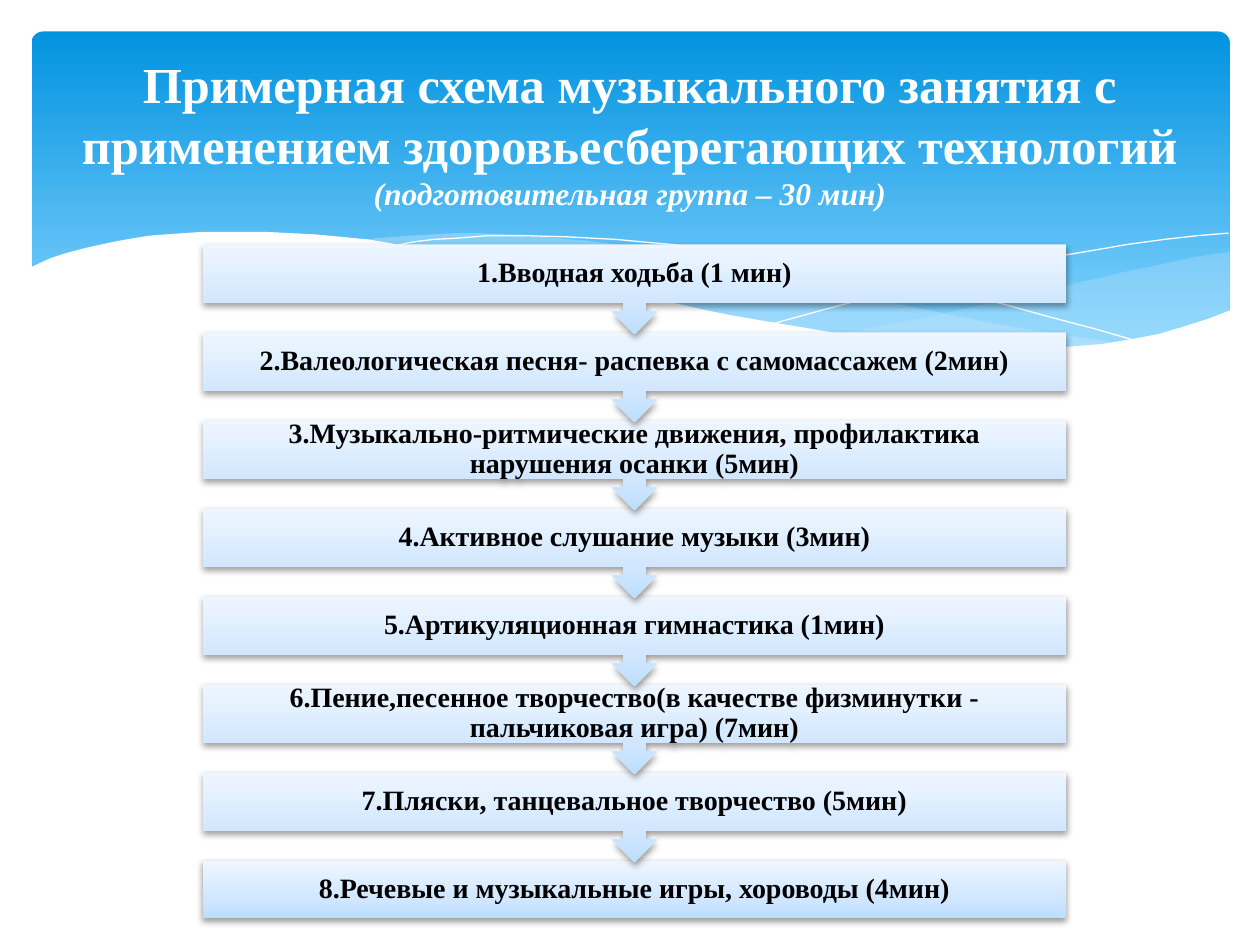
from pptx import Presentation
from pptx.dml.color import RGBColor
from pptx.enum.shapes import MSO_SHAPE as Preset
from pptx.enum.text import MSO_ANCHOR as Anchor, PP_ALIGN as Align
from pptx.oxml import parse_xml
from pptx.oxml.ns import nsdecls, qn
from pptx.util import Inches, Pt

WHITE = RGBColor(0xFF, 0xFF, 0xFF)
BLACK = RGBColor(0x00, 0x00, 0x00)
SKY_TOP = RGBColor(0x02, 0x93, 0xE0)
SKY_BOTTOM = RGBColor(0x83, 0xD3, 0xFE)
WAVE = RGBColor(0xC6, 0xE7, 0xFC)
BOX_DARK = RGBColor(0xBD, 0xDE, 0xFF)
BOX_MIDDLE = RGBColor(0xD1, 0xE7, 0xFF)
BOX_LIGHT = RGBColor(0xEE, 0xF6, 0xFF)
FONT = "Times New Roman"

# Wave outlines in hundredths of an inch
RIGHT_WAVE = [
    (975, 200), (962, 202), (948, 204), (935, 207), (921, 210), (906, 213), (891, 216),
    (876, 220), (861, 223), (832, 230), (805, 237), (779, 242), (753, 248), (729, 253),
    (706, 257), (683, 262), (661, 265), (691, 269), (719, 272), (745, 275), (769, 277),
    (803, 278), (835, 277), (863, 275), (889, 272), (913, 267), (935, 262), (949, 257),
    (963, 252), (976, 247), (976, 200)]
MIDDLE_WAVE = [
    (893, 273), (866, 269), (837, 265), (807, 260), (775, 254), (741, 247), (706, 240),
    (668, 231), (629, 222), (598, 214), (569, 208), (541, 203), (514, 198), (489, 194),
    (465, 191), (442, 189), (420, 187), (399, 186), (380, 185), (361, 185), (344, 186),
    (328, 187), (313, 188), (299, 189), (286, 191), (323, 196), (362, 203), (404, 211),
    (449, 222), (491, 232), (530, 240), (566, 248), (601, 255), (634, 261), (665, 266),
    (695, 270), (722, 274), (748, 276), (773, 277), (796, 278), (828, 278), (857, 277),
    (876, 275)]
LEFT_LINE = [
    (309, 195), (318, 194), (328, 192), (344, 190), (363, 189), (387, 187), (416, 187),
    (450, 188), (469, 189), (489, 190), (510, 192), (533, 194), (556, 197), (582, 200),
    (608, 204), (636, 208), (665, 213), (695, 219), (727, 226), (760, 233), (795, 241),
    (831, 251), (869, 261), (907, 272)]
RIGHT_LINE = [
    (613, 257), (624, 254), (653, 246), (672, 241), (695, 235), (720, 229), (748, 223),
    (776, 216), (806, 210), (836, 204), (866, 199), (895, 194), (924, 190), (951, 187),
    (975, 185)]
WHITE_HILL = [
    (977, 246), (959, 253), (940, 259), (920, 265), (899, 269), (875, 273), (850, 275),
    (823, 277), (809, 277), (778, 276), (744, 274), (708, 270), (668, 265), (626, 258),
    (579, 250), (555, 245), (529, 239), (503, 233), (475, 227), (447, 220), (418, 213),
    (391, 207), (365, 202), (340, 197), (316, 194), (292, 190), (271, 188), (250, 186),
    (230, 185), (211, 184), (177, 184), (161, 184), (146, 185), (132, 186), (119, 187),
    (106, 189), (95, 191), (85, 193), (67, 197), (52, 201), (40, 205), (29, 210),
    (23, 213), (23, 329), (977, 329)]
# Points, fill, opacity in percent; no fill means a thin white line
WAVES = [
    (RIGHT_WAVE, WAVE, 29), (MIDDLE_WAVE, WAVE, 40), (LEFT_LINE, None, 100),
    (RIGHT_LINE, None, 100), (WHITE_HILL, WHITE, 100)]

STEPS = [
    "1.Вводная ходьба (1 мин)",
    "2.Валеологическая песня- распевка с самомассажем (2мин)",
    "3.Музыкально-ритмические движения, профилактика нарушения осанки (5мин)",
    "4.Активное слушание музыки (3мин)",
    "5.Артикуляционная гимнастика (1мин)",
    "6.Пение,песенное творчество(в качестве физминутки - пальчиковая игра) (7мин)",
    "7.Пляски, танцевальное творчество (5мин)",
    "8.Речевые и музыкальные игры, хороводы (4мин)"]
STEP_LEFT, STEP_WIDTH = 1.61, 6.85
FIRST_TOP, LAST_TOP = 1.94, 6.83
CALLOUT_HEIGHT, BOX_HEIGHT = 0.71, 0.46
ROW = (LAST_TOP - FIRST_TOP) / (len(STEPS) - 1)


def fill_downwards(shape, stops):
    """Give the shape a top-to-bottom gradient of (percent, colour) stops and no outline."""
    shape.line.fill.background()
    shape.fill.background()
    marks = "".join(
        f'<a:gs pos="{percent * 1000}"><a:srgbClr val="{colour}"/></a:gs>'
        for percent, colour in stops)
    gradient = parse_xml(
        f'<a:gradFill {nsdecls("a")} rotWithShape="1"><a:gsLst>{marks}</a:gsLst>'
        '<a:lin ang="5400000" scaled="0"/></a:gradFill>')
    properties = shape._element.spPr
    properties.replace(properties.find(qn("a:noFill")), gradient)


presentation = Presentation()
presentation.slide_width, presentation.slide_height = Inches(10), Inches(7.5)
slide = presentation.slides.add_slide(presentation.slide_layouts[6])
shapes = slide.shapes

# Header with waves
header = shapes.add_shape(
    Preset.ROUNDED_RECTANGLE, Inches(0.25), Inches(0.25), Inches(9.51), Inches(2.7))
header.adjustments[0] = 0.034
header.shadow.inherit = False
fill_downwards(header, [(0, SKY_TOP), (90, SKY_BOTTOM)])

for points, colour, opacity in WAVES:
    builder = shapes.build_freeform(*points[0], scale=Inches(0.01))
    builder.add_line_segments(points[1:], close=colour is not None)
    wave = builder.convert_to_shape()
    wave.shadow.inherit = False
    if colour is None:
        wave.fill.background()
        wave.line.color.rgb = WHITE
        wave.line.width = Pt(0)
        continue
    wave.line.fill.background()
    wave.fill.solid()
    wave.fill.fore_color.rgb = colour
    if opacity < 100:
        solid = wave._element.spPr.find(qn("a:solidFill"))
        solid[0].append(parse_xml(f'<a:alpha {nsdecls("a")} val="{opacity * 1000}"/>'))

# Title
title = shapes.add_textbox(Inches(0.5), Inches(0.37), Inches(9), Inches(1.37))
title.text_frame.word_wrap = True
title.text_frame.vertical_anchor = Anchor.MIDDLE
paragraph = title.text_frame.paragraphs[0]
paragraph.alignment = Align.CENTER
main_run = paragraph.add_run()
main_run.text = "Примерная схема музыкального занятия с применением здоровьесберегающих технологий"
main_run.font.size = Pt(28.8)
paragraph.add_line_break()
note_run = paragraph.add_run()
note_run.text = "(подготовительная группа – 30 мин)"
note_run.font.size = Pt(18)
note_run.font.italic = True
for run in (main_run, note_run):
    run.font.name = FONT
    run.font.bold = True
    run.font.color.rgb = WHITE

# Steps, from the last up, so that each arrow lies over the next box
for row, text in reversed(list(enumerate(STEPS))):
    is_last = row == len(STEPS) - 1
    step = shapes.add_shape(
        Preset.RECTANGLE if is_last else Preset.DOWN_ARROW_CALLOUT,
        Inches(STEP_LEFT), Inches(FIRST_TOP + row * ROW),
        Inches(STEP_WIDTH), Inches(BOX_HEIGHT if is_last else CALLOUT_HEIGHT))
    fill_downwards(step, [(0, BOX_LIGHT), (65, BOX_MIDDLE), (100, BOX_DARK)])
    step.shadow.inherit = False
    step._element.spPr.find(qn("a:effectLst")).append(parse_xml(
        f'<a:outerShdw {nsdecls("a")} blurRad="{Pt(3.5)}" dist="{Pt(2)}" dir="5400000" '
        f'rotWithShape="0"><a:srgbClr val="{BLACK}"><a:alpha val="38000"/></a:srgbClr>'
        '</a:outerShdw>'))
    frame = step.text_frame
    frame.word_wrap = True
    frame.vertical_anchor = Anchor.MIDDLE
    frame.margin_left = frame.margin_right = Inches(0.12)
    frame.margin_top = frame.margin_bottom = Inches(0)
    frame.text = text
    paragraph = frame.paragraphs[0]
    paragraph.alignment = Align.CENTER
    paragraph.line_spacing = 0.9
    paragraph.font.name = FONT
    paragraph.font.size = Pt(16)
    paragraph.font.bold = True
    paragraph.font.color.rgb = BLACK

presentation.save("out.pptx")
